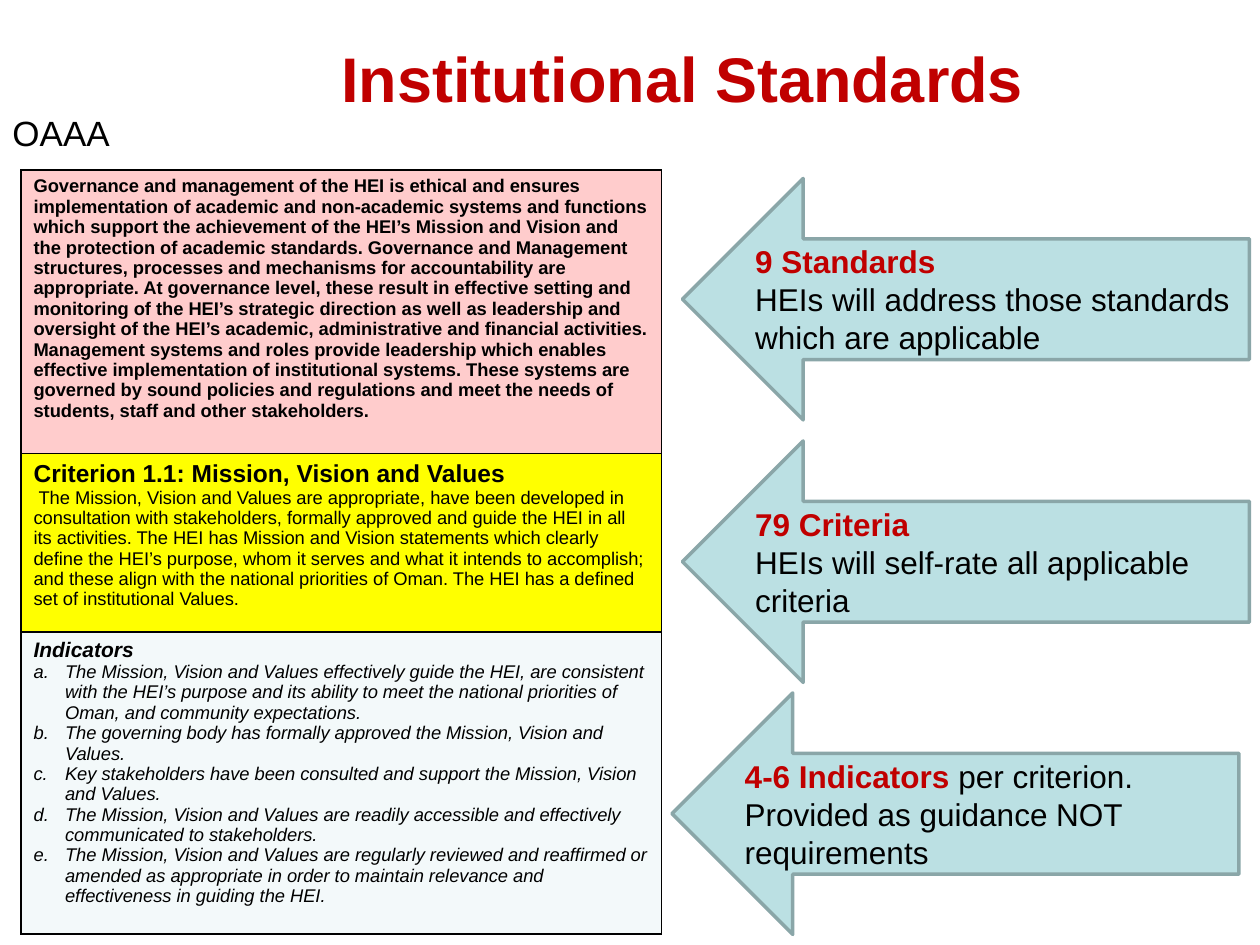
from lxml.etree import SubElement
from pptx import Presentation
from pptx.dml.color import RGBColor
from pptx.enum.shapes import MSO_SHAPE as SHAPE
from pptx.enum.text import MSO_ANCHOR as ANCHOR, PP_ALIGN as ALIGN
from pptx.oxml.ns import qn
from pptx.util import Inches, Pt

UNIT = Inches(1) / 12  # grid of 120 columns and 90 rows
RED, BLACK = "C00000", "000000"


def grid(*cells):
    return [round(n * UNIT) for n in cells]


def add_run(p, text, size, color=BLACK, bold=False, italic=False):
    r = p.add_run()
    r.text = text
    r.font.name, r.font.size = "Arial", Pt(size)
    r.font.bold, r.font.italic = bold, italic
    r.font.color.rgb = RGBColor.from_string(color)


prs = Presentation()
prs.slide_width, prs.slide_height = grid(120, 90)
s = prs.slides.add_slide(prs.slide_layouts[5])

# Title
title = s.shapes.title
title.left, title.top, title.width, title.height = grid(11, 4, 108, 11)
tf = title.text_frame
tf.vertical_anchor = ANCHOR.MIDDLE
tf.margin_bottom = Inches(0.4)
tf.paragraphs[0].alignment = ALIGN.CENTER
add_run(tf.paragraphs[0], "Institutional Standards", 36, RED, True)

# Agency label
tf = s.shapes.add_textbox(*grid(0, 10, 15, 5.2)).text_frame
tf.word_wrap = True
add_run(tf.paragraphs[0], "OAAA", 20)

# Table: standard, criterion, indicators
# Each row is (height, fill, paragraphs); a paragraph is a list of (text, size, bold, italic)
standard = (
    "Governance and management of the HEI is ethical and ensures implementation of academic and "
    "non-academic systems and functions which support the achievement of the HEI’s Mission and "
    "Vision and the protection of academic standards. Governance and Management structures, "
    "processes and mechanisms for accountability are appropriate. At governance level, these result "
    "in effective setting and monitoring of the HEI’s strategic direction as well as leadership and "
    "oversight of the HEI’s academic, administrative and financial activities. Management systems "
    "and roles provide leadership which enables effective implementation of institutional systems. "
    "These systems are governed by sound policies and regulations and meet the needs of students, "
    "staff and other stakeholders.")
criterion = (
    "The Mission, Vision and Values are appropriate, have been developed in consultation with "
    "stakeholders, formally approved and guide the HEI in all its activities. The HEI has Mission "
    "and Vision statements which clearly define the HEI’s purpose, whom it serves and what it "
    "intends to accomplish; and these align with the national priorities of Oman. The HEI has a "
    "defined set of institutional Values.")
indicators = [
    "The Mission, Vision and Values effectively guide the HEI, are consistent with the HEI’s purpose "
    "and its ability to meet the national priorities of Oman, and community expectations.",
    "The governing body has formally approved the Mission, Vision and Values.",
    "Key stakeholders have been consulted and support the Mission, Vision and Values.",
    "The Mission, Vision and Values are readily accessible and effectively communicated to "
    "stakeholders.",
    "The Mission, Vision and Values are regularly reviewed and reaffirmed or amended as appropriate "
    "in order to maintain relevance and effectiveness in guiding the HEI.",
]
rows = [
    (27, "FFCCCC", [[(standard, 10.5, True, False)]]),
    (17, "FFFF00", [[("Criterion 1.1: Mission, Vision and Values", 14, True, False)],
                    [(" ", 10.5, True, False), (criterion, 10.5, False, False)]]),
    (27.6, "F3F9FA", [[("Indicators", 12, True, True)]]
     + [[(text, 10.5, False, True)] for text in indicators]),
]
height = sum(row[0] for row in rows)
table = s.shapes.add_table(len(rows), 1, *grid(2, 16.2, 61, height)).table
table.first_row = table.horz_banding = False
for i, (height, fill, paragraphs) in enumerate(rows):
    table.rows[i].height = grid(height)[0]
    cell = table.cell(i, 0)
    # Borders go before the fill in the cell properties
    tcPr = cell._tc.get_or_add_tcPr()
    for side in ("a:lnL", "a:lnR", "a:lnT", "a:lnB"):
        ln = SubElement(tcPr, qn(side), w=str(Pt(1)))
        SubElement(SubElement(ln, qn("a:solidFill")), qn("a:srgbClr"), val=BLACK)
    cell.fill.solid()
    cell.fill.fore_color.rgb = RGBColor.from_string(fill)
    tf = cell.text_frame
    for j, runs in enumerate(paragraphs):
        p = tf.paragraphs[0] if j == 0 else tf.add_paragraph()
        if runs[0][0] in indicators:
            p.level = 1
            pPr = p._p.get_or_add_pPr()
            pPr.set("marL", str(Inches(0.25)))
            pPr.set("indent", str(-Inches(0.25)))
            SubElement(pPr, qn("a:buFont"), typeface="+mj-lt")
            SubElement(pPr, qn("a:buAutoNum"), type="alphaLcPeriod")
        for text, size, bold, italic in runs:
            add_run(p, text, size, BLACK, bold, italic)

# Arrows pointing at the table rows: left, top, red lead, rest of the line, second line
arrows = [
    (65, 17, "9 Standards", "", "HEIs will address those standards which are applicable"),
    (65, 42, "79 Criteria", "", "HEIs will self-rate all applicable criteria"),
    (64, 66, "4-6 Indicators ", "per criterion.", "Provided as guidance NOT requirements"),
]
for left, top, lead, rest, detail in arrows:
    sp = s.shapes.add_shape(SHAPE.LEFT_ARROW, *grid(left, top, 54, 23))
    sp.shadow.inherit = False
    sp.fill.solid()
    sp.fill.fore_color.rgb = RGBColor.from_string("BBE0E3")
    sp.line.color.rgb = RGBColor.from_string("8AA6A8")
    sp.line.width = Pt(2)
    tf = sp.text_frame
    tf.word_wrap = True
    tf.vertical_anchor = ANCHOR.MIDDLE
    p = tf.paragraphs[0]
    p.alignment = ALIGN.LEFT
    add_run(p, lead, 18, RED, True)
    if rest:
        add_run(p, rest, 18)
    p = tf.add_paragraph()
    p.alignment = ALIGN.LEFT
    add_run(p, detail, 18)

prs.save("out.pptx")
